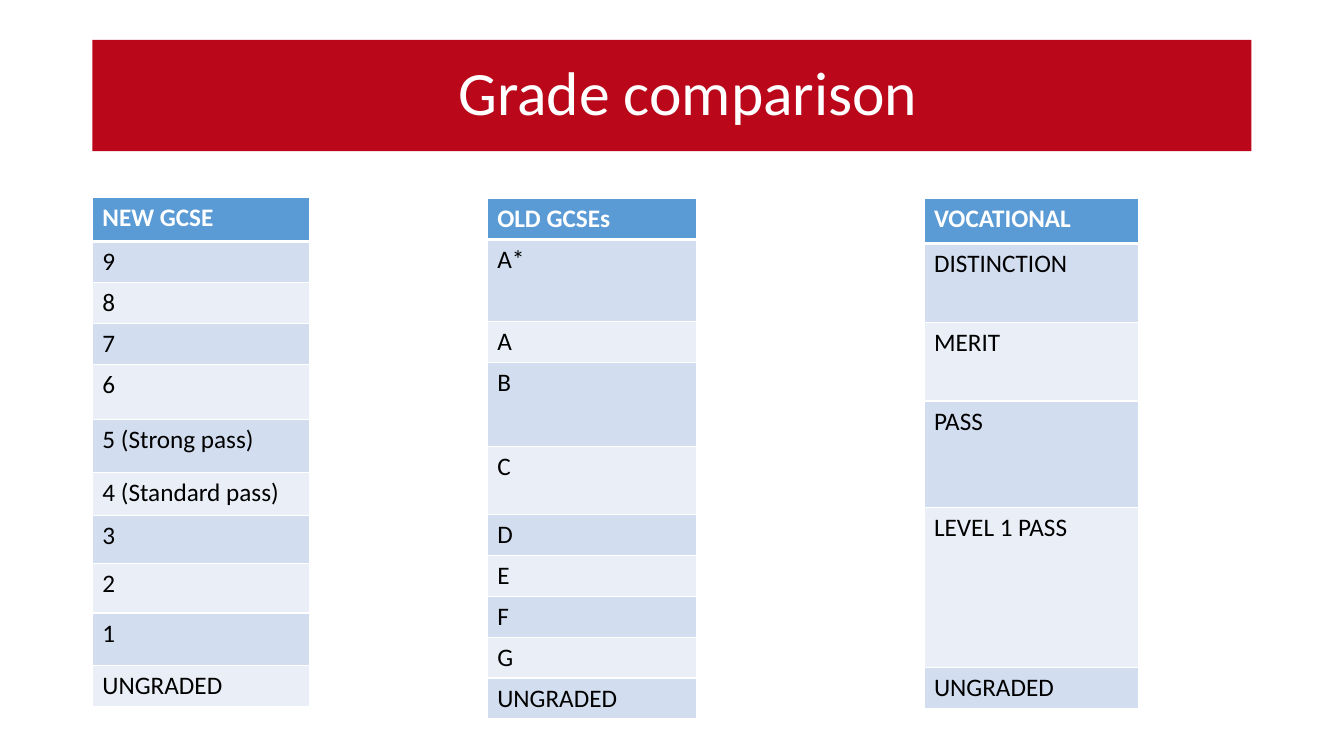
from dataclasses import dataclass

from pptx import Presentation
from pptx import util as u
from pptx.dml.color import RGBColor
from pptx.enum import shapes, text
from pptx.oxml import parse_xml
from pptx.oxml.ns import nsdecls

PX = 9525  # EMU per px, 96 px to the inch
FONT = "Calibri"
WHITE = RGBColor(0xFF, 0xFF, 0xFF)
BLACK = RGBColor(0x00, 0x00, 0x00)
RED = RGBColor(0xBA, 0x07, 0x19)
HEADER_BLUE = RGBColor(0x5B, 0x9B, 0xD5)
BANDS = (RGBColor(0xD2, 0xDE, 0xEF), RGBColor(0xEA, 0xEF, 0xF7))

TITLE_FONT = {"name": FONT, "size": u.Pt(44), "bold": False}
CELL_FONT = {"name": FONT, "size": u.Pt(18)}


@dataclass
class GradeTable:
    left: int
    top: int
    width: int
    rows: list[tuple[str, int]]  # label and height, header first


GRADE_TABLES = [
    GradeTable(88, 188, 207, [
        ("NEW GCSE", 42), ("9", 39), ("8", 39), ("7", 39), ("6", 53),
        ("5 (Strong pass)", 50), ("4 (Standard pass)", 41), ("3", 46),
        ("2", 47), ("1", 50), ("UNGRADED", 39),
    ]),
    GradeTable(464, 189, 199, [
        ("OLD GCSEs", 39), ("A*", 78), ("A", 39), ("B", 80), ("C", 65),
        ("D", 39), ("E", 39), ("F", 39), ("G", 39), ("UNGRADED", 39),
    ]),
    GradeTable(880, 189, 204, [
        ("VOCATIONAL", 43), ("DISTINCTION", 75), ("MERIT", 75),
        ("PASS", 101), ("LEVEL 1 PASS", 153), ("UNGRADED", 39),
    ]),
]


def px(n: int) -> u.Emu:
    return u.Emu(n * PX)


def write(p, label: str, color: RGBColor, fmt: dict) -> None:
    r = p.add_run()
    r.text = label
    for name, value in fmt.items():
        setattr(r.font, name, value)
    r.font.color.rgb = color


def set_borders(cell, top: int, bottom: int) -> None:
    """White borders; widths in points."""
    tcPr = cell._tc.get_or_add_tcPr()
    for side, width in {"L": 1, "R": 1, "T": top, "B": bottom}.items():
        tcPr.append(parse_xml(
            f'<a:ln{side} {nsdecls("a")} w="{u.Pt(width)}"><a:solidFill>'
            f'<a:srgbClr val="{WHITE}"/></a:solidFill></a:ln{side}>'))


def draw_title(s) -> None:
    sp = s.shapes.add_shape(shapes.MSO_SHAPE.RECTANGLE,
                            px(88), px(38), px(1104), px(106))
    sp.shadow.inherit = False
    sp.fill.solid()
    sp.fill.fore_color.rgb = RED
    sp.line.fill.background()
    tf = sp.text_frame
    frame = {"word_wrap": True, "vertical_anchor": text.MSO_ANCHOR.MIDDLE,
             "margin_left": px(41), "margin_right": px(10),
             "margin_top": px(5), "margin_bottom": px(5)}
    for name, value in frame.items():
        setattr(tf, name, value)
    p = tf.paragraphs[0]
    p.alignment = text.PP_ALIGN.CENTER
    p.line_spacing = 0.9
    write(p, "Grade comparison", WHITE, TITLE_FONT)


def draw_table(s, spec: GradeTable) -> None:
    height = sum(h for _, h in spec.rows)
    table = s.shapes.add_table(len(spec.rows), 1, px(spec.left), px(spec.top),
                               px(spec.width), px(height)).table
    for i, (label, row_height) in enumerate(spec.rows):
        header = i == 0
        table.rows[i].height = px(row_height)
        cell = table.cell(i, 0)
        # The line under the header is thicker
        set_borders(cell, top=3 if i == 1 else 1, bottom=3 if header else 1)
        cell.fill.solid()
        cell.fill.fore_color.rgb = HEADER_BLUE if header else BANDS[(i - 1) % 2]
        write(cell.text_frame.paragraphs[0], label,
              WHITE if header else BLACK, CELL_FONT | {"bold": header})


def main() -> None:
    prs = Presentation()
    prs.slide_width, prs.slide_height = px(1280), px(720)
    s = prs.slides.add_slide(prs.slide_layouts[6])
    draw_title(s)
    for spec in GRADE_TABLES:
        draw_table(s, spec)
    prs.save("out.pptx")


if __name__ == "__main__":
    main()
